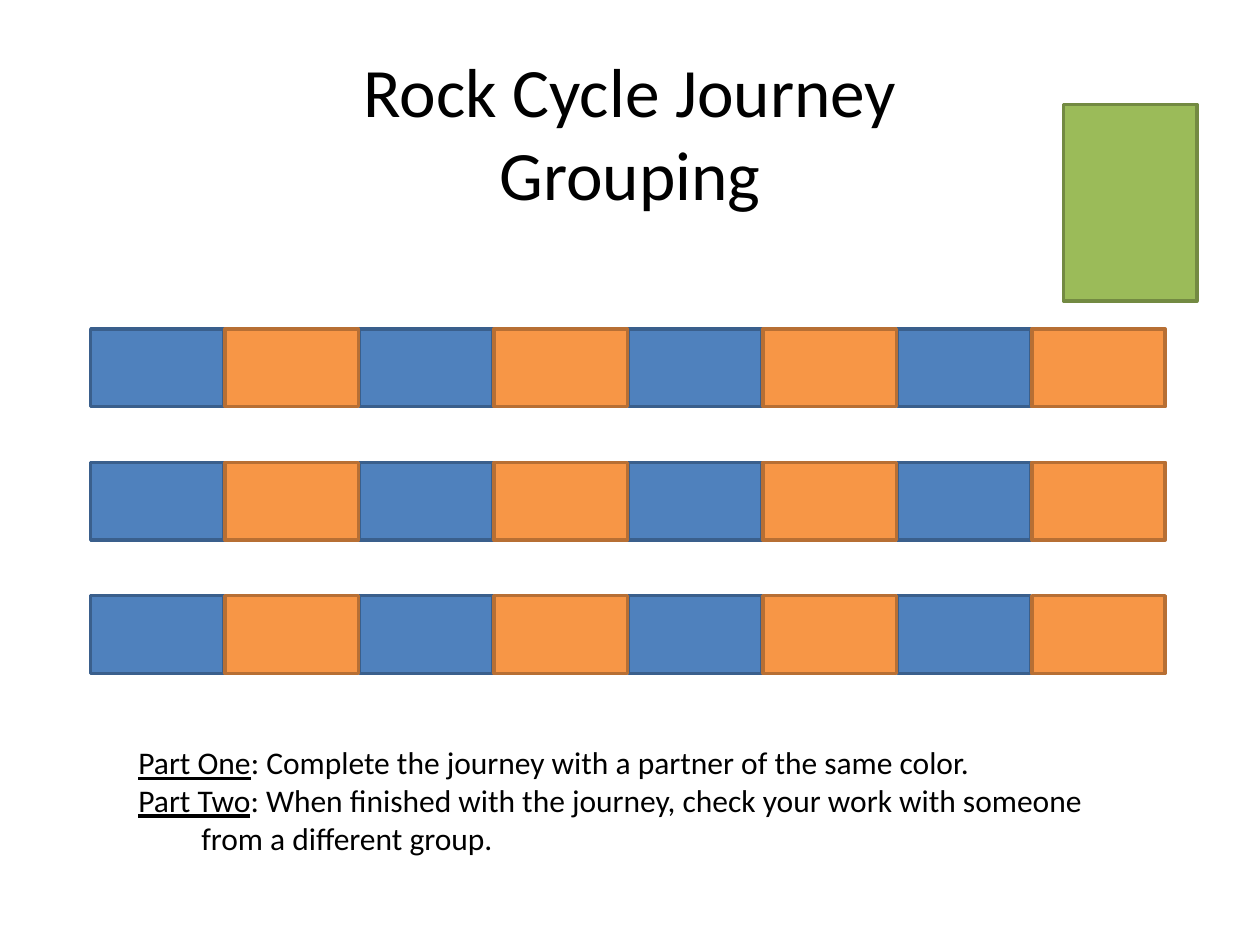
from pptx import Presentation
from pptx.dml.color import RGBColor
from pptx.enum.shapes import MSO_SHAPE
from pptx.enum.text import MSO_ANCHOR, PP_ALIGN
from pptx.util import Cm, Pt

BLACK = RGBColor(0x00, 0x00, 0x00)
BLUE, BLUE_EDGE = RGBColor(0x4F, 0x81, 0xBD), RGBColor(0x3A, 0x5F, 0x8C)
ORANGE, ORANGE_EDGE = RGBColor(0xF7, 0x96, 0x46), RGBColor(0xB7, 0x6F, 0x34)
GREEN, GREEN_EDGE = RGBColor(0x9B, 0xBB, 0x59), RGBColor(0x73, 0x8A, 0x42)
FONT = "Calibri"

TITLE_LINES = ["Rock Cycle Journey", "Grouping"]
INSTRUCTIONS = [
    [("Part One", True), (": Complete the journey with a partner of the same color.", False)],
    [("Part Two", True), (": When finished with the journey, check your work with someone", False)],
    [("\tfrom a different group.", False)],
]

ROWS, COLUMNS = 3, 8
GRID_LEFT, GRID_TOP = 1.83, 6.63
COLUMN_STEP, ROW_STEP = 2.71, 2.69
SEAT_WIDTH, SEAT_HEIGHT = 2.69, 1.57
SEAT_COLORS = [(BLUE, BLUE_EDGE), (ORANGE, ORANGE_EDGE)]


def add_box(slide, left, top, width, height, fill, edge):
    shape = slide.shapes.add_shape(
        MSO_SHAPE.RECTANGLE, Cm(left), Cm(top), Cm(width), Cm(height))
    shape.shadow.inherit = False
    shape.fill.solid()
    shape.fill.fore_color.rgb = fill
    shape.line.color.rgb = edge
    shape.line.width = Pt(2)


def add_run(paragraph, text, size, underline=False):
    run = paragraph.add_run()
    run.text = text
    run.font.name = FONT
    run.font.size = Pt(size)
    run.font.color.rgb = BLACK
    run.font.underline = underline


def add_title(slide):
    title = slide.shapes.title
    title.left, title.top, title.width, title.height = Cm(1.27), Cm(0.86), Cm(22.86), Cm(3.56)
    title.text_frame.vertical_anchor = MSO_ANCHOR.MIDDLE
    paragraph = title.text_frame.paragraphs[0]
    paragraph.alignment = PP_ALIGN.CENTER
    for index, line in enumerate(TITLE_LINES):
        if index:
            paragraph.add_line_break()
        add_run(paragraph, line, 39.6)


def add_seats(slide):
    for parity, (fill, edge) in enumerate(SEAT_COLORS):
        for column in range(parity, COLUMNS, len(SEAT_COLORS)):
            for row in range(ROWS):
                add_box(slide, GRID_LEFT + column * COLUMN_STEP, GRID_TOP + row * ROW_STEP,
                        SEAT_WIDTH, SEAT_HEIGHT, fill, edge)


def add_instructions(slide):
    frame = slide.shapes.add_textbox(Cm(2.54), Cm(14.86), Cm(20.32), Cm(2.57)).text_frame
    frame.word_wrap = True
    for index, runs in enumerate(INSTRUCTIONS):
        paragraph = frame.add_paragraph() if index else frame.paragraphs[0]
        for text, underline in runs:
            add_run(paragraph, text, 18, underline)


def main():
    presentation = Presentation()
    presentation.slide_width, presentation.slide_height = Cm(25.4), Cm(19.05)
    slide = presentation.slides.add_slide(presentation.slide_layouts.get_by_name("Title Only"))
    add_title(slide)
    add_seats(slide)
    add_box(slide, 21.44, 2.11, 2.69, 3.96, GREEN, GREEN_EDGE)
    add_instructions(slide)
    presentation.save("out.pptx")


if __name__ == "__main__":
    main()
